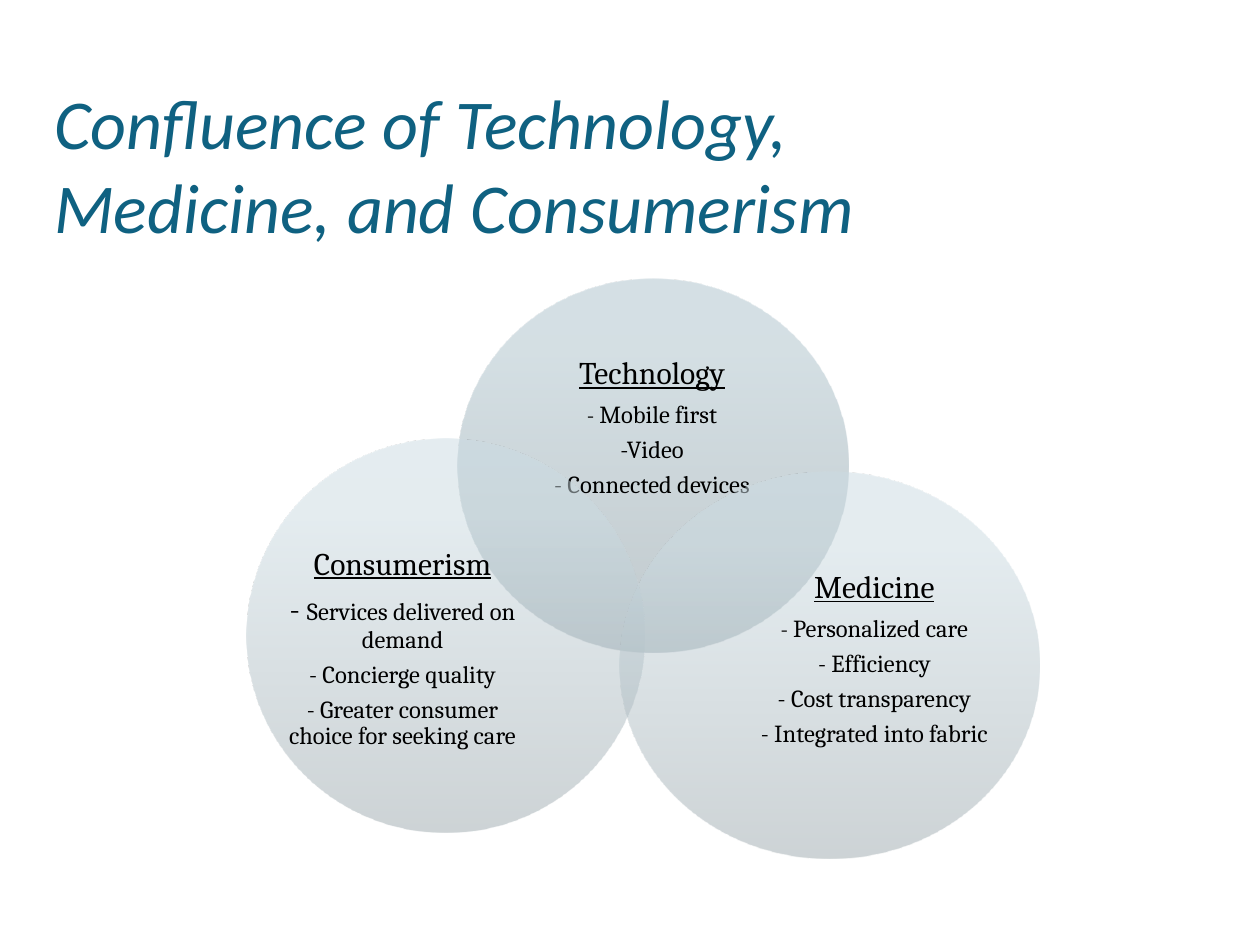
"""Build a slide with three overlapping circles on technology, medicine and consumerism."""
from dataclasses import dataclass

from lxml import etree
from pptx import Presentation
from pptx.dml.color import RGBColor
from pptx.enum import shapes, text
from pptx.oxml.ns import qn
from pptx.util import Inches, Pt

COLORS = {
    "title": "0F6181",
    "body": "000000",
    "strong": ("84959C", "ABC1CA", "ACC2CC"),
    "pale": ("9DA9AE", "CBDBE2", "CCDCE3"),
}
STOPS = (0, 80, 100)
OPACITY = 50
HEADING_SIZE, POINT_SIZE = 18, 14


@dataclass
class Circle:
    heading: str
    points: list[str]
    tone: str
    oval: tuple[float, float, float, float]
    label: tuple[float, float, float, float]
    first_dash_size: float = 13


CIRCLES = [
    Circle("Technology", ["- Mobile first", "-Video", "- Connected devices"],
           "strong", (3.63, 2.21, 3.1, 2.97), (4.04, 2.73, 2.27, 1.34)),
    Circle("Medicine",
           ["- Personalized care", "- Efficiency", "- Cost transparency",
            "- Integrated into fabric"],
           "pale", (4.92, 3.74, 3.33, 3.07), (5.94, 4.53, 2, 1.41)),
    Circle("Consumerism",
           ["- Services delivered on demand", "- Concierge quality",
            "- Greater consumer choice for seeking care"],
           "pale", (1.96, 3.48, 3.15, 3.13), (2.25, 4.29, 1.89, 1.72), 18),
]


def add_run(paragraph, words: str, size: float, font: str = "Cambria",
            color: str = "body") -> None:
    run = paragraph.add_run()
    run.text = words
    run.font.size = Pt(size)
    run.font.name = font
    run.font.color.rgb = RGBColor.from_string(COLORS[color])
    run.font.italic = color == "title"
    run.font.underline = size == HEADING_SIZE and words.isalpha()


def fill_gradient(oval, tone: str) -> None:
    oval.fill.gradient()
    gradient = oval._element.spPr.find(qn("a:gradFill"))
    for child in list(gradient):
        gradient.remove(child)
    stops = etree.SubElement(gradient, qn("a:gsLst"))
    for position, color in zip(STOPS, COLORS[tone]):
        stop = etree.SubElement(stops, qn("a:gs"), pos=str(position * 1000))
        value = etree.SubElement(stop, qn("a:srgbClr"), val=color)
        etree.SubElement(value, qn("a:alpha"), val=str(OPACITY * 1000))
    etree.SubElement(gradient, qn("a:lin"), ang=str(270 * 60000), scaled="0")


def add_paragraph(frame, first: bool, size: float):
    paragraph = frame.paragraphs[0] if first else frame.add_paragraph()
    paragraph.alignment = text.PP_ALIGN.CENTER
    paragraph.line_spacing = 0.9
    paragraph.space_after = Pt(0.35 * size)
    return paragraph


def draw_circle(slide, circle: Circle) -> None:
    oval = slide.shapes.add_shape(shapes.MSO_SHAPE.OVAL, *map(Inches, circle.oval))
    oval.shadow.inherit = False
    oval.line.fill.background()
    fill_gradient(oval, circle.tone)

    frame = slide.shapes.add_textbox(*map(Inches, circle.label)).text_frame
    frame.word_wrap = True
    frame.vertical_anchor = text.MSO_ANCHOR.MIDDLE
    frame.margin_left = frame.margin_right = frame.margin_top = frame.margin_bottom = 0
    add_run(add_paragraph(frame, True, HEADING_SIZE), circle.heading, HEADING_SIZE)
    for index, point in enumerate(circle.points):
        paragraph = add_paragraph(frame, False, POINT_SIZE)
        if index == 0:
            add_run(paragraph, point[:2], circle.first_dash_size)
            point = point[2:]
        add_run(paragraph, point, POINT_SIZE)


def draw_title(slide) -> None:
    title = slide.shapes.title
    title.left, title.top, title.width, title.height = map(Inches, (0.33, 0.67, 9.17, 1.25))
    frame = title.text_frame
    frame.auto_size = text.MSO_AUTO_SIZE.NONE
    frame.vertical_anchor = text.MSO_ANCHOR.MIDDLE
    paragraph = frame.paragraphs[0]
    paragraph.alignment = text.PP_ALIGN.LEFT
    add_run(paragraph, "Confluence of Technology,", 40, "Calibri", "title")
    paragraph.add_line_break()
    add_run(paragraph, "Medicine, and Consumerism", 40, "Calibri", "title")


def main() -> None:
    deck = Presentation()
    deck.slide_width, deck.slide_height = Inches(10), Inches(7.5)
    slide = deck.slides.add_slide(deck.slide_layouts.get_by_name("Title Only"))
    draw_title(slide)
    for circle in CIRCLES:
        draw_circle(slide, circle)
    deck.save("out.pptx")


if __name__ == "__main__":
    main()
